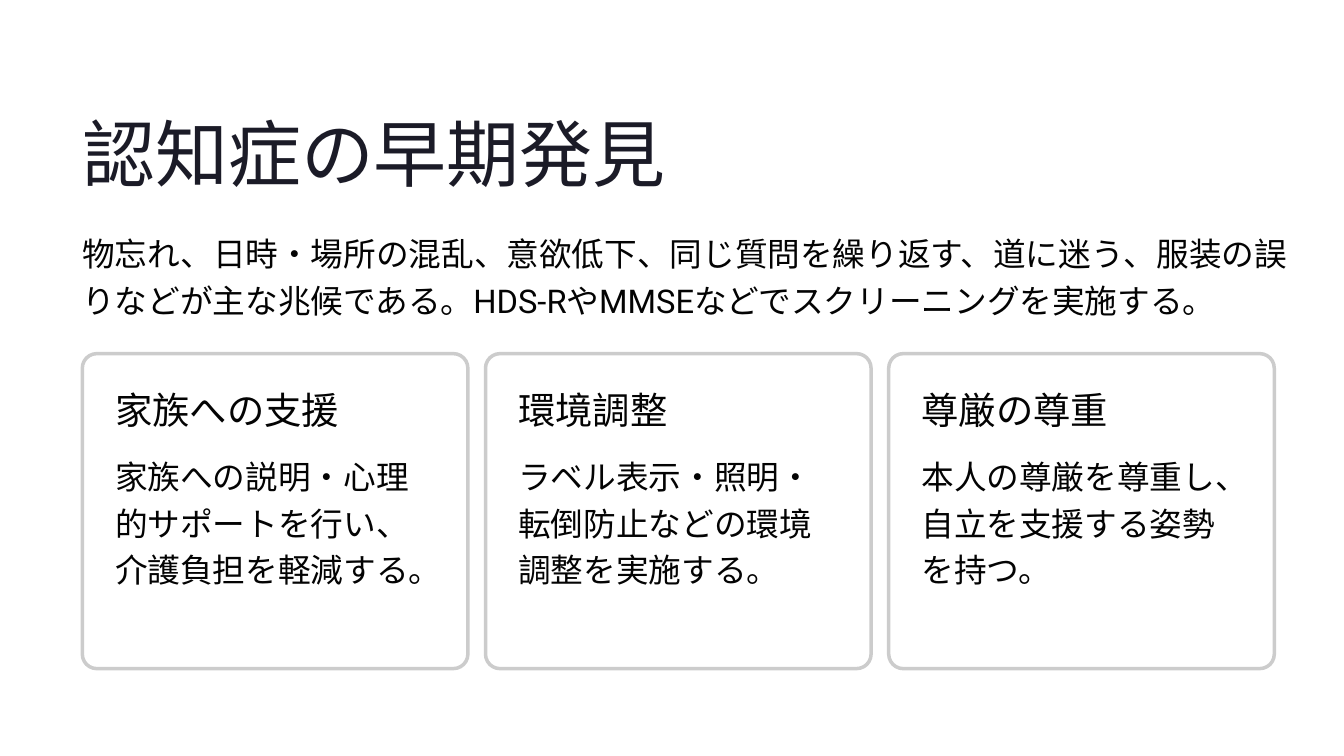
from pptx import Presentation
from pptx.dml.color import RGBColor
from pptx.enum.shapes import MSO_SHAPE as Shape
from pptx.enum.text import MSO_ANCHOR as Anchor, MSO_AUTO_SIZE as AutoSize, PP_ALIGN as Align
from pptx.oxml.ns import qn
from pptx.util import Inches, Pt
from lxml.etree import SubElement

COLORS = {"title": "1B1B27", "text": "030303", "card": "FFFFFF", "border": "CCCCCC"}
CARDS = [
    ("家族への支援", "家族への説明・心理的サポートを行い、介護負担を軽減する。"),
    ("環境調整", "ラベル表示・照明・転倒防止などの環境調整を実施する。"),
    ("尊厳の尊重", "本人の尊厳を尊重し、自立を支援する姿勢を持つ。"),
]
LEFT, CARD_TOP, CARD_PITCH, PADDING = 0.98, 4.21, 4.8, 0.39


class SlideBuilder:
    """Holds the text style and the current slide, and adds its elements."""

    heading_font = "Inter"
    body_font = "Roboto"

    def __init__(self, slide):
        self.slide = slide

    def color(self, name):
        return RGBColor.from_string(COLORS[name])

    def set_text(self, shape, text, font, size, spacing, color="text", wrap=True):
        frame = shape.text_frame
        frame.text = text
        frame.word_wrap = wrap
        frame.auto_size = AutoSize.NONE
        frame.vertical_anchor = Anchor.TOP
        frame.margin_left = frame.margin_top = frame.margin_right = frame.margin_bottom = 0
        paragraph = frame.paragraphs[0]
        paragraph.alignment = Align.LEFT
        paragraph.line_spacing = Pt(spacing)
        paragraph.space_before = Pt(0)
        run_font = paragraph.runs[0].font
        run_font.name = font
        run_font.size = Pt(size)
        run_font.color.rgb = self.color(color)

    def title(self, text, left, top, width, height):
        shape = self.slide.shapes.title
        shape.left, shape.top = Inches(left), Inches(top)
        shape.width, shape.height = Inches(width), Inches(height)
        self.set_text(shape, text, self.heading_font, 62.5, 78.5, "title", wrap=False)

    def text_box(self, left, top, width, height):
        return self.slide.shapes.add_textbox(
            Inches(left), Inches(top), Inches(width), Inches(height))

    def heading(self, text, left, top, width, height):
        shape = self.text_box(left, top, width, height)
        self.set_text(shape, text, self.heading_font, 32, 39, wrap=False)

    def body(self, text, left, top, width, height):
        shape = self.text_box(left, top, width, height)
        self.set_text(shape, text, self.body_font, 28, 40)

    def panel(self, left, top, width, height):
        shape = self.slide.shapes.add_shape(
            Shape.ROUNDED_RECTANGLE, Inches(left), Inches(top), Inches(width), Inches(height))
        shape.adjustments[0] = 0.046
        shape.shadow.inherit = False
        shape.fill.solid()
        shape.fill.fore_color.rgb = self.color("card")
        fill_color = shape.element.spPr.find(qn("a:solidFill"))[0]
        SubElement(fill_color, qn("a:alpha")).set("val", "95000")
        shape.line.color.rgb = self.color("border")
        shape.line.width = Pt(3)

    def card(self, heading, text, left, top):
        self.panel(left, top, 4.59, 3.75)
        self.heading(heading, left + PADDING, top + PADDING, 3.78, 0.64)
        self.body(text, left + PADDING, top + 1.14, 3.78, 1.96)


def main():
    presentation = Presentation()
    presentation.slide_width, presentation.slide_height = Inches(16), Inches(9)
    builder = SlideBuilder(presentation.slides.add_slide(presentation.slide_layouts[5]))
    builder.title("認知症の早期発見", LEFT, 1.24, 8.73, 1.09)
    builder.body(
        "物忘れ、日時・場所の混乱、意欲低下、同じ質問を繰り返す、道に迷う、服装の誤りなどが"
        "主な兆候である。HDS-RやMMSEなどでスクリーニングを実施する。",
        LEFT, 2.7, 14.49, 1.3)
    for index, (heading, text) in enumerate(CARDS):
        builder.card(heading, text, LEFT + index * CARD_PITCH, CARD_TOP)
    presentation.save("out.pptx")


if __name__ == "__main__":
    main()
